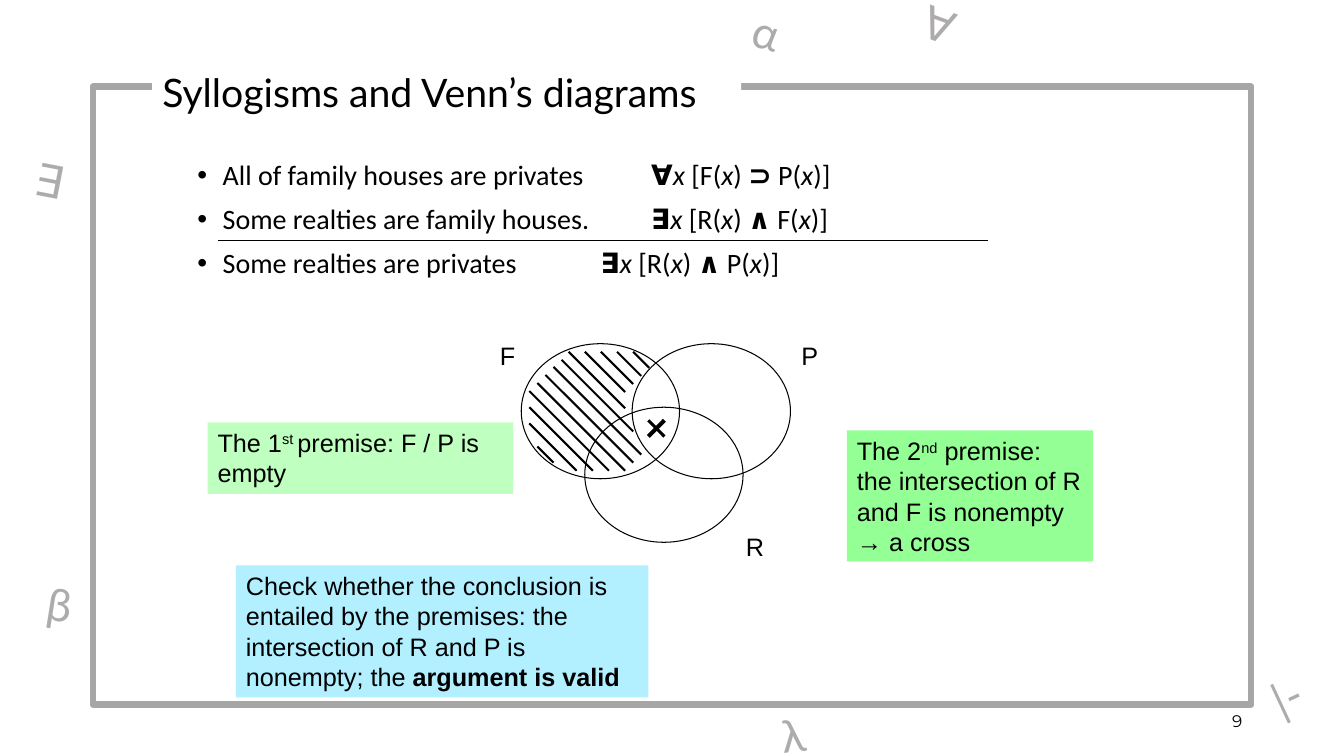
from dataclasses import dataclass
from typing import Any, NamedTuple

import pptx
import pptx.dml.color
import pptx.enum.shapes
import pptx.enum.text
import pptx.oxml
import pptx.oxml.ns
import pptx.util

RGB = pptx.dml.color.RGBColor
KIND = pptx.enum.shapes.MSO_SHAPE
ALIGN = pptx.enum.text.PP_ALIGN
ANCHOR = pptx.enum.text.MSO_ANCHOR

BLACK = RGB(0, 0, 0)
WHITE = RGB(255, 255, 255)
GREEN = RGB(0, 255, 0)
BLUE = RGB(0, 204, 255)
FRAME = RGB(0xA6, 0xA6, 0xA6)
GREY = RGB(0xAE, 0xAB, 0xAB)

SCALE = 9144  # EMU in one px, 100 px to the inch


class Box(NamedTuple):
    x: int
    y: int
    w: int
    h: int

    def emu(self) -> list[int]:
        return [side * SCALE for side in self]


class Bit(NamedTuple):
    text: str
    bold: bool = False
    slant: bool = False
    raised: bool = False


class Face(NamedTuple):
    font: str
    size: int
    color: RGB = BLACK


@dataclass
class Ring:
    name: str
    x: int
    y: int
    label: tuple[int, int]


@dataclass
class Note:
    box: Box
    fill: RGB
    alpha: int
    bits: list[Bit]


@dataclass
class Sign:
    text: str
    box: Box
    turn: int


class Stroke(NamedTuple):
    x: int
    y: int
    run: int


ARIAL = Face("Arial", 18)
CALIBRI = Face("Calibri", 20)
LATO = Face("Lato", 28)
SYMBOL = Face("Lato", 32, GREY)
NUMBER = Face("Montserrat", 12)

RINGS = [
    Ring("F", 517, 341, (486, 333)),
    Ring("P", 627, 341, (785, 333)),
    Ring("R", 580, 404, (730, 522)),
]
HATCH = [
    Stroke(628, 349, 16), Stroke(612, 349, 24), Stroke(596, 349, 32),
    Stroke(580, 349, 40), Stroke(564, 349, 56), Stroke(557, 357, 71),
    Stroke(549, 364, 87), Stroke(541, 372, 87), Stroke(533, 380, 87),
    Stroke(525, 388, 79), Stroke(525, 404, 63), Stroke(525, 420, 47),
    Stroke(533, 443, 16),
]
NOTES = [
    Note(Box(206, 419, 303, 71), GREEN, 25, [
        Bit("The 1"), Bit("st ", raised=True), Bit("premise: F / P is empty")]),
    Note(Box(840, 427, 244, 130), GREEN, 42, [
        Bit("The 2"), Bit("nd", raised=True),
        Bit(" premise: the intersection of R and F is nonempty → a cross")]),
    Note(Box(234, 561, 409, 131), BLUE, 30, [
        Bit("Check whether the conclusion is entailed by the premises: the "
            "intersection of R and P is nonempty; the "),
        Bit("argument is valid", bold=True)]),
]
SIGNS = [
    Sign("∀", Box(906, -6, 60, 64), 20),
    Sign("∃", Box(25, 148, 63, 64), 11),
    Sign("α", Box(737, 2, 63, 64), 16),
    Sign("β", Box(37, 568, 58, 64), 9),
    Sign("λ", Box(765, 696, 63, 64), -6),
    Sign("|-", Box(1252, 655, 68, 64), -25),
]


def add_xml(parent: Any, tag: str) -> None:
    """Append one empty drawing element, given as its name and attributes."""
    space = pptx.oxml.ns.nsdecls("a")
    parent.append(pptx.oxml.parse_xml(f"<a:{tag} {space}/>"))


def write(para: Any, bits: list[Bit], face: Face) -> None:
    for bit in bits:
        run = para.add_run()
        run.text = bit.text
        font = run.font
        font.name, font.size = face.font, pptx.util.Pt(face.size)
        font.color.rgb = face.color
        font.bold, font.italic = bit.bold, bit.slant
        if bit.raised:
            run._r.get_or_add_rPr().set("baseline", "30000")


def add_text(shapes: Any, box: Box, bits: list[Bit], face: Face) -> Any:
    area = shapes.add_textbox(*box.emu())
    area.text_frame.word_wrap = True
    write(area.text_frame.paragraphs[0], bits, face)
    return area


def add_shape(shapes: Any, kind: KIND, box: Box) -> Any:
    """Add a shape with no shadow, fill or line."""
    shape = shapes.add_shape(kind, *box.emu())
    shape.shadow.inherit = False
    shape.fill.background()
    shape.line.fill.background()
    return shape


def outline(shape: Any, color: RGB, width: float) -> None:
    shape.line.color.rgb = color
    shape.line.width = pptx.util.Pt(width)


def add_line(shapes: Any, start: tuple[int, int], end: tuple[int, int],
             width: float) -> None:
    ends = [side * SCALE for side in start + end]
    line = shapes.add_connector(pptx.enum.shapes.MSO_CONNECTOR.STRAIGHT, *ends)
    outline(line, BLACK, width)
    add_xml(line.element.spPr, "effectLst")


def add_ring(shapes: Any, ring: Ring) -> None:
    group = shapes.add_group_shape().shapes
    oval = add_shape(group, KIND.OVAL, Box(ring.x, ring.y, 157, 134))
    outline(oval, BLACK, 0.75)
    add_text(group, Box(*ring.label, 47, 40), [Bit(ring.name)], ARIAL)


def add_note(shapes: Any, note: Note) -> None:
    shape = add_shape(shapes, KIND.RECTANGLE, note.box)
    shape.fill.solid()
    shape.fill.fore_color.rgb = note.fill
    tint = shape.element.spPr.find(".//" + pptx.oxml.ns.qn("a:srgbClr"))
    add_xml(tint, f"alpha val='{note.alpha * 1000}'")
    frame = shape.text_frame
    frame.word_wrap, frame.vertical_anchor = True, ANCHOR.TOP
    para = frame.paragraphs[0]
    para.alignment = ALIGN.LEFT
    write(para, note.bits, ARIAL)


def rule(claim: str, sign: str, left: str, link: str, right: str) -> list[Bit]:
    """Give a sentence and its formula, set apart by tabs."""
    var = Bit("x", slant=True)
    return [Bit(claim + " \t\t"), Bit(sign, bold=True), Bit("x ", slant=True),
            Bit(f"[{left}("), var, Bit(") "), Bit(link, bold=True),
            Bit(f" {right}("), var, Bit(")]")]


RULES = [
    rule("All of family houses are privates", "∀", "F", "⊃", "P"),
    rule("Some realties are family houses.", "∃", "R", "∧", "F"),
    rule("Some realties are privates", "∃", "R", "∧", "P"),
]


def add_rules(shapes: Any) -> None:
    frame = add_text(shapes, Box(186, 155, 961, 189), [], CALIBRI).text_frame
    for index, bits in enumerate(RULES):
        para = frame.add_paragraph() if index else frame.paragraphs[0]
        para.line_spacing, para.space_before = 0.9, pptx.util.Pt(10)
        props = para._p.get_or_add_pPr()
        props.set("marL", str(25 * SCALE))
        props.set("indent", str(-25 * SCALE))
        add_xml(props, "buFont typeface='Arial'")
        add_xml(props, "buChar char='•'")
        write(para, bits, CALIBRI)


def set_title(title: Any) -> None:
    box = Box(151, 40, 584, 103).emu()
    title.left, title.top, title.width, title.height = box
    title.fill.solid()
    title.fill.fore_color.rgb = WHITE
    frame = title.text_frame
    frame.word_wrap, frame.vertical_anchor = True, ANCHOR.MIDDLE
    frame.auto_size = pptx.enum.text.MSO_AUTO_SIZE.NONE
    frame.paragraphs[0].alignment = ALIGN.LEFT
    write(frame.paragraphs[0], [Bit("Syllogisms and Venn’s diagrams")], LATO)
    title.element.getparent().append(title.element)  # above the frame


def main() -> None:
    deck = pptx.Presentation()
    deck.slide_width, deck.slide_height = 1333 * SCALE, 750 * SCALE
    slide = deck.slides.add_slide(deck.slide_layouts.get_by_name("Title Only"))
    shapes = slide.shapes
    add_rules(shapes)
    page = add_text(shapes, Box(942, 695, 300, 40), [Bit("9")], NUMBER)
    page.text_frame.vertical_anchor = ANCHOR.MIDDLE
    page.text_frame.paragraphs[0].alignment = ALIGN.RIGHT
    for ring in RINGS:
        add_ring(shapes, ring)
    hatch = shapes.add_group_shape().shapes
    for x, y, run in HATCH:
        add_line(hatch, (x, y), (x + run, y + run), 1.5)
    cross = shapes.add_group_shape().shapes
    add_line(cross, (643, 417), (659, 433), 2.25)
    add_line(cross, (659, 417), (643, 433), 3)
    for note in NOTES:
        add_note(shapes, note)
    add_line(shapes, (216, 239), (980, 239), 0.75)
    outline(add_shape(shapes, KIND.RECTANGLE, Box(92, 86, 1149, 613)), FRAME, 4.5)
    set_title(shapes.title)
    for sign in SIGNS:
        area = add_text(shapes, sign.box, [Bit(sign.text)], SYMBOL)
        area.rotation = sign.turn
    deck.save("out.pptx")


if __name__ == "__main__":
    main()
